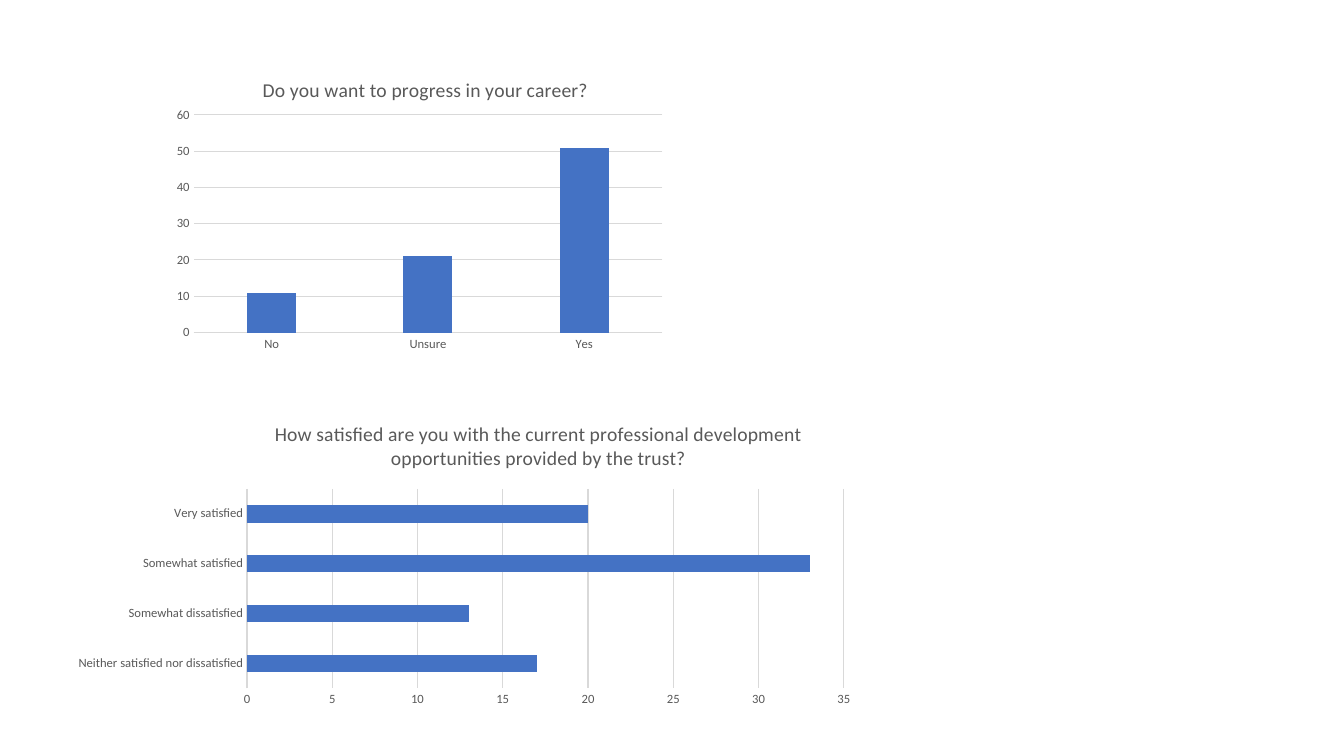
"""Build a slide with two survey bar charts."""
from lxml import etree
from pptx import Presentation, util as u
from pptx.chart.data import CategoryChartData
from pptx.dml.color import RGBColor
from pptx.enum import chart as ec
from pptx.oxml.ns import qn

theme = dict(font="Calibri", text="595959", grid="D9D9D9", bar="4472C4",
             title=14, label=9, rule=0.75)
ink = {k: RGBColor.from_string(theme[k]) for k in ("text", "grid", "bar")}


def style(font, size):
    """Set the face, size and colour of a font."""
    for key, val in dict(name=theme["font"], size=u.Pt(size), bold=False).items():
        setattr(font, key, val)
    font.color.rgb = ink["text"]


def place(node, spot, **share):
    """Give a chart part a manual layout in shares of the chart."""
    for old in node.findall(qn("c:layout")):
        node.remove(old)
    frame = etree.Element(qn("c:layout"))
    node.insert(spot, frame)
    man = etree.SubElement(frame, qn("c:manualLayout"))
    if "w" in share:
        etree.SubElement(man, qn("c:layoutTarget")).set("val", "inner")
    for key in "xy":
        etree.SubElement(man, qn(f"c:{key}Mode")).set("val", "edge")
    for key, val in share.items():
        etree.SubElement(man, qn(f"c:{key}")).set("val", str(val))


deck = Presentation()
deck.slide_width, deck.slide_height = u.Inches(13.33), u.Inches(7.5)
slide = deck.slides.add_slide(deck.slide_layouts[6])

polls = [
    dict(kind=ec.XL_CHART_TYPE.COLUMN_CLUSTERED, box=(1.67, 0.54, 5, 3),
         title="Do you want to progress in your career?",
         data={"No": 11, "Unsure": 21, "Yes": 51},
         gap=219, lap=-27, top=60, step=10,
         head=dict(x=0.18, y=0.06), plot=dict(x=0.05, y=0.2, w=0.93, h=0.72)),
    dict(kind=ec.XL_CHART_TYPE.BAR_CLUSTERED, box=(0.61, 4.07, 8, 3),
         title="How satisfied are you with the current professional development "
               "opportunities provided by the trust?",
         data={"Neither satisfied nor dissatisfied": 17, "Somewhat dissatisfied": 13,
               "Somewhat satisfied": 33, "Very satisfied": 20},
         gap=182, lap=0, top=35, step=5,
         head=dict(x=0.26, y=0.02), plot=dict(x=0.23, y=0.26, w=0.74, h=0.66)),
]

for poll in polls:
    data = CategoryChartData()
    data.categories = list(poll["data"])
    data.add_series("Series 1", list(poll["data"].values()))
    box = [u.Inches(n) for n in poll["box"]]
    chart = slide.shapes.add_chart(poll["kind"], *box, data).chart
    chart.has_legend = False
    style(chart.font, theme["label"])

    title = chart.chart_title
    title.text_frame.text = poll["title"]
    style(title.text_frame.paragraphs[0].runs[0].font, theme["title"])
    title.include_in_layout = False
    place(title._element, 1, **poll["head"])
    place(chart._chartSpace.chart.plotArea, 0, **poll["plot"])

    bars = chart.plots[0]
    form = dict(gap_width=poll["gap"], overlap=poll["lap"], vary_by_categories=False)
    for key, val in form.items():
        setattr(bars, key, val)
    fill = bars.series[0].format.fill
    fill.solid()
    fill.fore_color.rgb = ink["bar"]

    cat, val = chart.category_axis, chart.value_axis
    for axis in (cat, val):
        axis.major_tick_mark = axis.minor_tick_mark = ec.XL_TICK_MARK.NONE
        style(axis.tick_labels.font, theme["label"])
    form = dict(minimum_scale=0, maximum_scale=poll["top"], major_unit=poll["step"],
                has_major_gridlines=True)
    for key, num in form.items():
        setattr(val, key, num)
    val.format.line.fill.background()
    for line in (cat.format.line, val.major_gridlines.format.line):
        line.color.rgb = ink["grid"]
        line.width = u.Pt(theme["rule"])

deck.save("out.pptx")
